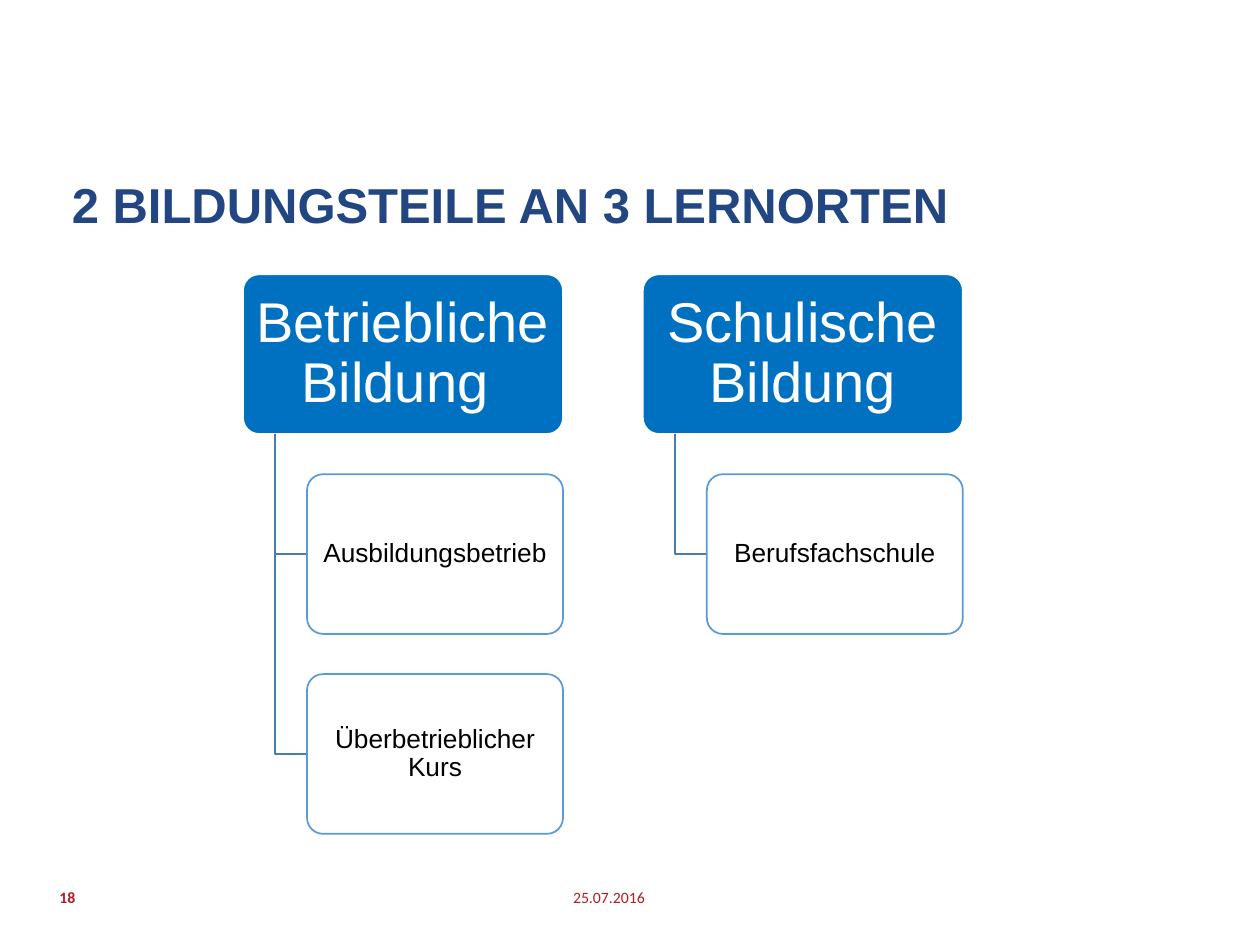
from pptx import Presentation
from pptx.dml.color import RGBColor
from pptx.enum.shapes import MSO_SHAPE
from pptx.enum.text import MSO_ANCHOR, PP_ALIGN
from pptx.util import Cm, Pt

ROUND = MSO_SHAPE.ROUNDED_RECTANGLE
TOP, MIDDLE = MSO_ANCHOR.TOP, MSO_ANCHOR.MIDDLE
LEFT, CENTER, RIGHT = PP_ALIGN.LEFT, PP_ALIGN.CENTER, PP_ALIGN.RIGHT

COLORS = {
    "title": "224681",
    "small": "B21D24",
    "head": "0070C0",
    "edge": "5B9BD5",
    "link": "497CAB",
    "white": "FFFFFF",
    "black": "000000",
}

TREES = [
    ("Betriebliche Bildung ", ["Ausbildungsbetrieb", "Überbetrieblicher Kurs"]),
    ("Schulische Bildung", ["Berufsfachschule"]),
]
TREE_X, TREE_Y, TREE_STEP = 4.9, 5.53, 8.06
HEAD_W, BOX_H, ROW_STEP = 6.45, 3.22, 4.03
STEM, INDENT = 0.65, 1.29


def color(name):
    return RGBColor.from_string(COLORS[name])


def put_text(shape, text, hue, font, align, anchor, pad, space=1.0):
    frame = shape.text_frame
    side, edge = map(Cm, pad)
    look = {
        "word_wrap": True,
        "vertical_anchor": anchor,
        "margin_left": side,
        "margin_right": side,
        "margin_top": edge,
        "margin_bottom": edge,
    }
    for key, value in look.items():
        setattr(frame, key, value)
    para = frame.paragraphs[0]
    para.alignment = align
    para.line_spacing = space
    run = para.add_run()
    run.text = text
    for key, value in font.items():
        setattr(run.font, key, value)
    run.font.color.rgb = color(hue)


def add_label(slide, place, *args):
    put_text(slide.shapes.add_textbox(*map(Cm, place)), *args)


def add_box(slide, place, text, fill, line, hue, size, pad):
    box = slide.shapes.add_shape(ROUND, *map(Cm, place))
    box.shadow.inherit = False
    box.adjustments[0] = 0.1
    box.fill.solid()
    box.fill.fore_color.rgb = color(fill)
    box.line.color.rgb = color(line)
    box.line.width = Pt(1)
    font = {"name": "Arial", "size": Pt(size)}
    put_text(box, text, hue, font, CENTER, MIDDLE, pad, 0.9)


def add_elbow(slide, left, top, right, bottom):
    start, *rest = [
        (Cm(x), Cm(y)) for x, y in ((left, top), (left, bottom), (right, bottom))
    ]
    path = slide.shapes.build_freeform(*start)
    path.add_line_segments(rest, close=False)
    elbow = path.convert_to_shape()
    elbow.shadow.inherit = False
    elbow.fill.background()
    elbow.line.color.rgb = color("link")
    elbow.line.width = Pt(1)


def add_tree(slide, left, head, leaves):
    add_box(slide, (left, TREE_Y, HEAD_W, BOX_H), head,
            "head", "white", "white", 32, (0.14, 0.1))
    x = left + INDENT
    for row, leaf in enumerate(leaves, 1):
        y = TREE_Y + row * ROW_STEP
        add_elbow(slide, left + STEM, TREE_Y + BOX_H, x, y + BOX_H / 2)
        add_box(slide, (x, y, HEAD_W - INDENT, BOX_H), leaf,
                "white", "edge", "black", 15, (0.08, 0.05))


def main():
    deck = Presentation()
    deck.slide_width, deck.slide_height = Cm(25.4), Cm(19.05)
    slide = deck.slides.add_slide(deck.slide_layouts[6])
    big = {"name": "Arial", "size": Pt(28), "bold": True}
    small = {"name": "Calibri", "size": Pt(9)}
    add_label(slide, (1.2, 3.53, 19.4, 2.39), "2 BILDUNGSTEILE AN 3 LERNORTEN",
              "title", big, LEFT, TOP, (0.25, 0.13), 0.9)
    for col, (head, leaves) in enumerate(TREES):
        add_tree(slide, TREE_X + col * TREE_STEP, head, leaves)
    add_label(slide, (7.28, 17.57, 5.72, 1.02), "25.07.2016",
              "small", small, RIGHT, MIDDLE, (0, 0))
    add_label(slide, (1.2, 17.57, 5.72, 1.02), "18",
              "small", {**small, "bold": True}, LEFT, MIDDLE, (0, 0))
    deck.save("out.pptx")


if __name__ == "__main__":
    main()
